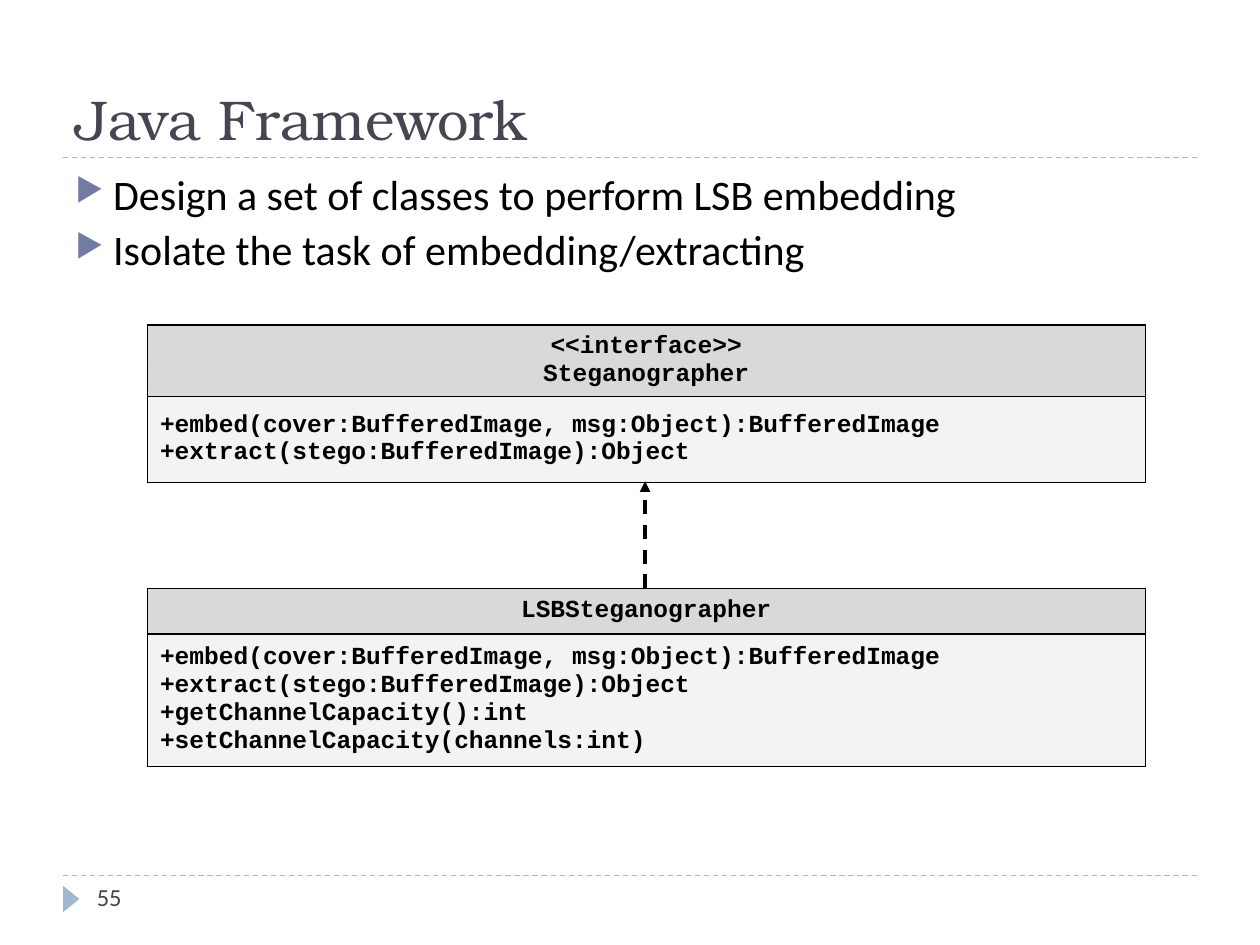
"""Build the Java Framework slide with two class boxes and an arrow."""
import pptx
import pptx.dml.color
import pptx.enum.dml
import pptx.enum.shapes
import pptx.enum.text
import pptx.oxml
import pptx.oxml.ns
import pptx.util
from pptx.util import Inches

Color = pptx.dml.color.RGBColor
Anchor = pptx.enum.text.MSO_ANCHOR
Align = pptx.enum.text.PP_ALIGN
Shape = pptx.enum.shapes.MSO_SHAPE
BLACK = Color(0x00, 0x00, 0x00)
SLATE = Color(0x46, 0x46, 0x53)
PALE_BLUE = Color(0x9F, 0xB8, 0xCD)
HEADER_GRAY = Color(0xD9, 0xD9, 0xD9)
BODY_GRAY = Color(0xF3, 0xF3, 0xF3)
NAMESPACE = pptx.oxml.ns.nsdecls("a")


def add_xml(parent, tag, attributes="", content=""):
    parent.append(pptx.oxml.parse_xml(f"<a:{tag} {NAMESPACE} {attributes}>{content}</a:{tag}>"))


def write_lines(frame, lines, text_format, para_format):
    for index, line in enumerate(lines):
        para = frame.paragraphs[0] if index == 0 else frame.add_paragraph()
        for name, value in para_format.items():
            setattr(para, name, value)
        span = para.add_run()
        span.text = line
        for name, value in text_format.items():
            if name == "color":
                span.font.color.rgb = value
            else:
                setattr(span.font, name, value)


deck = pptx.Presentation()
deck.slide_width, deck.slide_height = Inches(10), Inches(7.5)
page = deck.slides.add_slide(deck.slide_layouts[6])

left_aligned = {"alignment": Align.LEFT}
bullet_format = {"alignment": Align.LEFT, "line_spacing": 0.9, "space_before": pptx.util.Pt(6)}
text_boxes = [
    ((0.5, 0.17, 9, 1.08), Anchor.BOTTOM, ["Java Framework"],
     {"name": "TeX Gyre Bonum", "size": pptx.util.Pt(32), "color": SLATE}, left_aligned),
    ((0.67, 6.95, 2.17, 0.4), Anchor.TOP, ["55"],
     {"name": "Calibri", "size": pptx.util.Pt(14), "color": SLATE}, left_aligned),
    ((0.5, 1.33, 9, 5.4), Anchor.TOP,
     ["Design a set of classes to perform LSB embedding",
      "Isolate the task of embedding/extracting"],
     {"name": "Calibri", "size": pptx.util.Pt(24), "color": BLACK}, bullet_format),
]
for place, anchor, lines, text_format, para_format in text_boxes:
    box = page.shapes.add_textbox(*map(Inches, place))
    box.text_frame.word_wrap = True
    box.text_frame.vertical_anchor = anchor
    write_lines(box.text_frame, lines, text_format, para_format)

for para in box.text_frame.paragraphs:
    properties = para._p.get_or_add_pPr()
    properties.set("marL", str(Inches(0.3)))
    properties.set("indent", str(Inches(-0.3)))
    add_xml(properties, "buClr", content='<a:srgbClr val="727CA3"/>')
    add_xml(properties, "buSzPct", 'val="76000"')
    add_xml(properties, "buChar", 'char="▶"')

shapes = [
    (Shape.ISOSCELES_TRIANGLE, (0.46, 7.07, 0.21, 0.13), 90, PALE_BLUE),
    (Shape.RECTANGLE, (0, 3.05, 10, 0), 0, BODY_GRAY),
    (Shape.RECTANGLE, (0, 2.92, 10, 0), 0, BODY_GRAY),
]
for kind, place, rotation, color in shapes:
    shape = page.shapes.add_shape(kind, *map(Inches, place))
    shape.rotation = rotation
    shape.shadow.inherit = False
    shape.fill.solid()
    shape.fill.fore_color.rgb = color
    shape.line.fill.background()

code_format = {"name": "Courier New", "size": pptx.util.Pt(14), "bold": True, "color": BLACK}
shared_methods = ["+embed(cover:BufferedImage, msg:Object):BufferedImage",
                  "+extract(stego:BufferedImage):Object"]
class_boxes = [
    (2.58, 0.68, ["<<interface>>", "Steganographer"], shared_methods),
    (4.67, 1.05, ["LSBSteganographer"],
     shared_methods + ["+getChannelCapacity():int", "+setChannelCapacity(channels:int)"]),
]
for top, body_height, heading, methods in class_boxes:
    heights = [0.36, body_height]
    table = page.shapes.add_table(2, 1, Inches(1.17), Inches(top),
                                  Inches(7.92), Inches(sum(heights))).table
    rows = [(heading, Align.CENTER, HEADER_GRAY, 1), (methods, Align.LEFT, BODY_GRAY, 0.75)]
    for index, (lines, alignment, color, bottom_width) in enumerate(rows):
        table.rows[index].height = Inches(heights[index])
        cell = table.cell(index, 0)
        cell.vertical_anchor = Anchor.MIDDLE
        write_lines(cell.text_frame, lines, code_format, {"alignment": alignment})
        for side, width in zip("LRTB", (1, 1, 1, bottom_width)):
            add_xml(cell._tc.get_or_add_tcPr(), f"ln{side}", f'w="{pptx.util.Pt(width)}"',
                    '<a:solidFill><a:srgbClr val="000000"/></a:solidFill>')
        cell.fill.solid()
        cell.fill.fore_color.rgb = color

dashed_lines = [
    ((0.5, 6.95, 9.5, 6.95), PALE_BLUE, 0.75, False),
    ((0.5, 1.25, 9.5, 1.25), PALE_BLUE, 0.75, False),
    ((5.12, 4.67, 5.12, 3.82), BLACK, 2, True),
]
for ends, color, width, has_arrow in dashed_lines:
    line = page.shapes.add_connector(pptx.enum.shapes.MSO_CONNECTOR.STRAIGHT, *map(Inches, ends))
    line.line.color.rgb = color
    line.line.width = pptx.util.Pt(width)
    line.line.dash_style = pptx.enum.dml.MSO_LINE.DASH
    if has_arrow:
        add_xml(line.line._get_or_add_ln(), "tailEnd", 'type="triangle"')
    add_xml(line._element.spPr, "effectLst")

deck.save("out.pptx")
